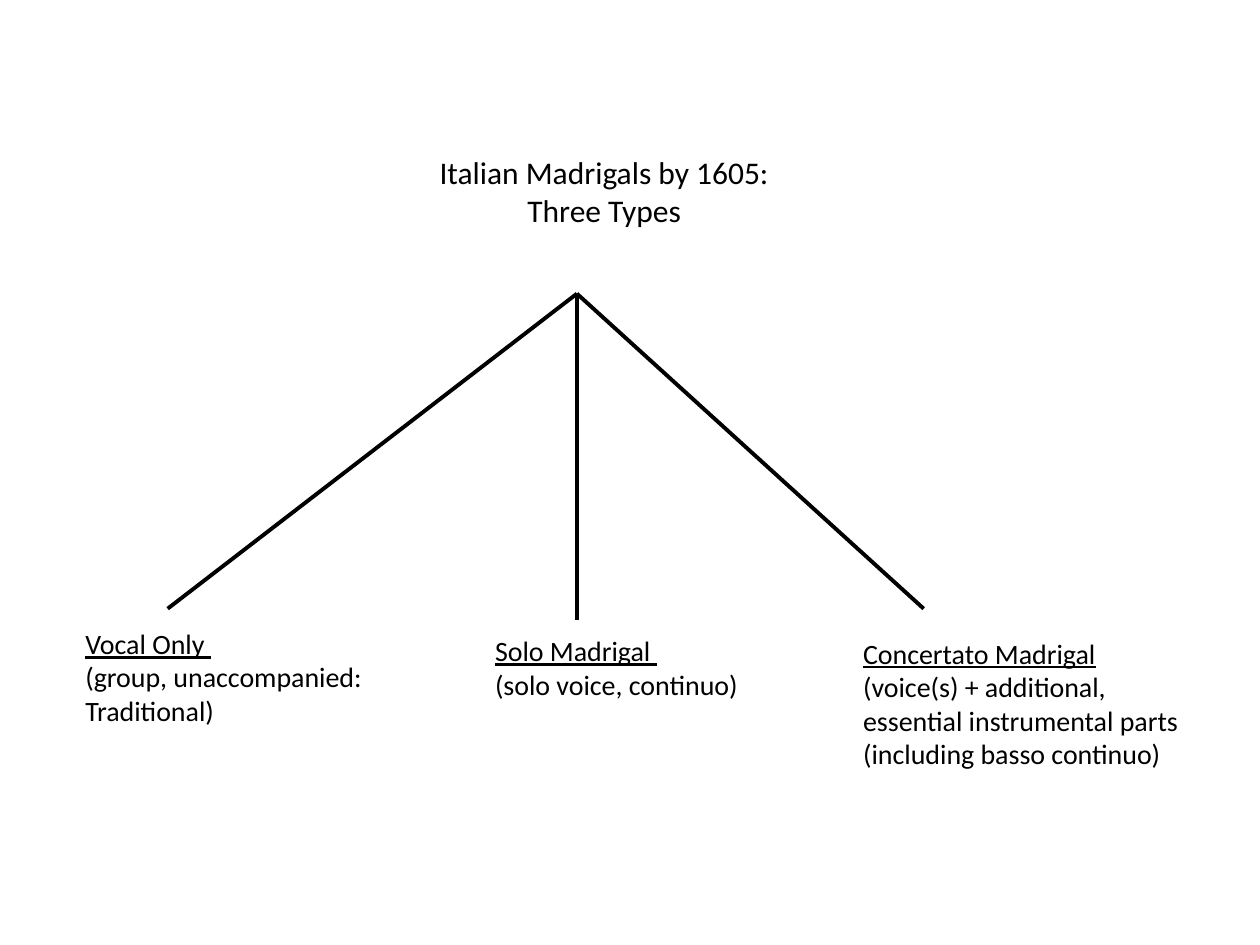
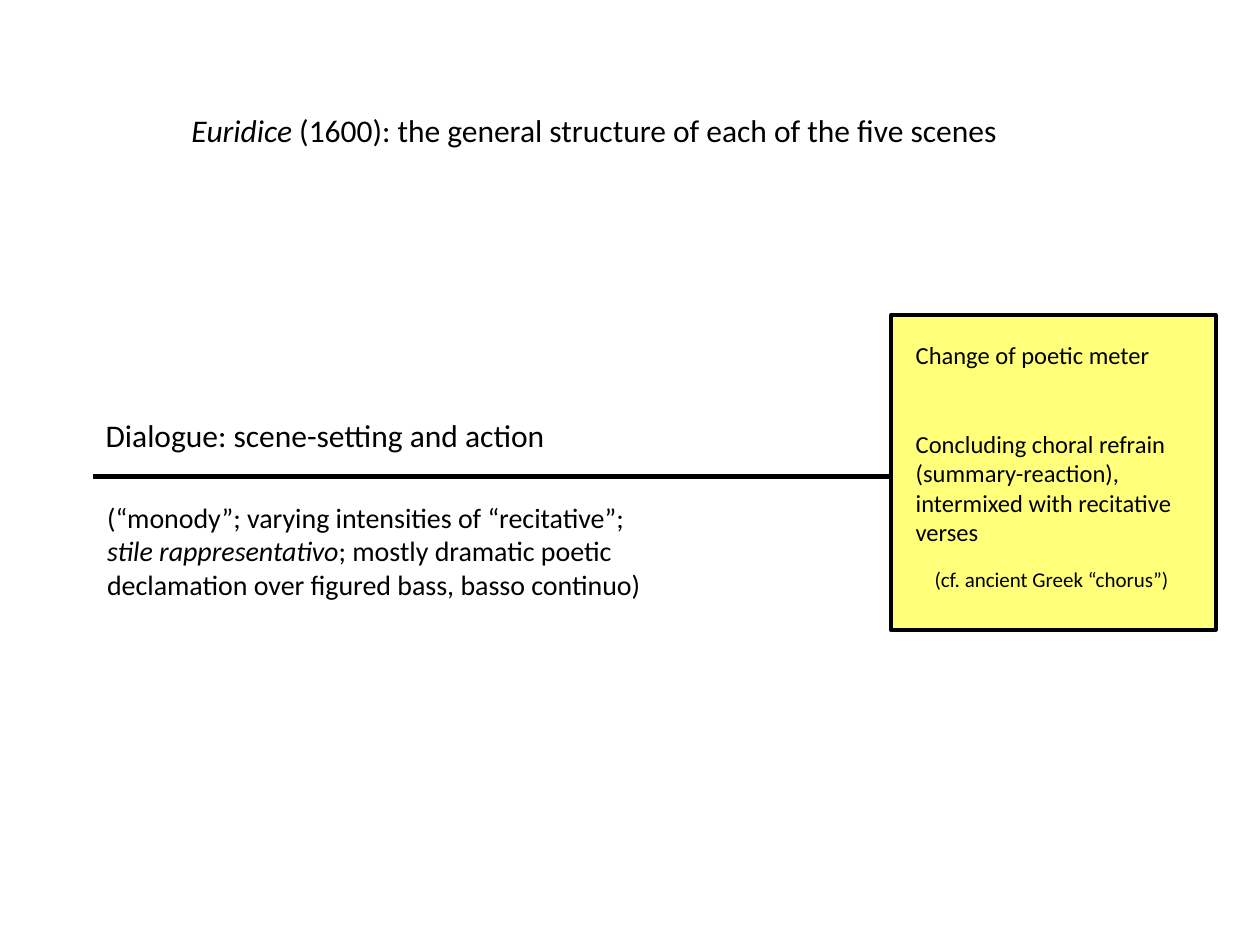
from dataclasses import dataclass

from lxml.etree import SubElement
from pptx import Presentation
from pptx.dml.color import RGBColor
from pptx.enum.shapes import MSO_CONNECTOR as CONN, MSO_SHAPE as SHAPE
from pptx.enum.text import MSO_AUTO_SIZE as FIT, PP_ALIGN as ALIGN
from pptx.oxml.ns import qn
from pptx.slide import Slide
from pptx.util import Cm, Pt

BLACK = RGBColor(0x00, 0x00, 0x00)
YELLOW = RGBColor(0xFF, 0xFF, 0x00)
FONT = "Calibri"
TITLE, BODY, NOTE, SMALL = 18, 16, 14, 12


@dataclass(frozen=True)
class Run:
    text: str
    italic: bool = False


@dataclass(frozen=True)
class Para:
    runs: tuple[Run, ...]
    underline: bool = False
    before: float = 0


@dataclass(frozen=True)
class Label:
    left: float
    top: float
    width: float
    height: float
    size: int
    paras: tuple[Para, ...]
    align: ALIGN = ALIGN.LEFT


@dataclass(frozen=True)
class Line:
    start: tuple[float, float]
    end: tuple[float, float]
    weight: float


def plain(text: str, underline: bool = False, before: float = 0) -> Para:
    """Return a paragraph of one upright run."""
    return Para((Run(text),), underline, before)


APEX = (11.63, 5.92)
BRANCH_ENDS = ((3.38, 12.27), (11.63, 12.5), (18.62, 12.27))
BRANCHES = [Line(APEX, end, 2.25) for end in BRANCH_ENDS]
MADRIGAL_LABELS = [
    Label(8.05, 2.97, 8.26, 1.8, TITLE,
          (plain("Italian Madrigals by 1605:"), plain("Three Types")), ALIGN.CENTER),
    Label(1.47, 12.5, 6.55, 2.31, BODY,
          (plain("Vocal Only ", underline=True),
           plain("(group, unaccompanied:"), plain("Traditional)"))),
    Label(9.73, 12.65, 5.92, 1.63, BODY,
          (plain("Solo Madrigal ", underline=True), plain("(solo voice, continuo)"))),
    Label(17.15, 12.7, 7.19, 3, BODY,
          (plain("Concertato Madrigal", underline=True),
           plain("(voice(s) + additional, essential instrumental parts "
                 "(including basso continuo)"))),
]

REFRAIN_LEFT, REFRAIN_TOP, REFRAIN_WIDTH, REFRAIN_HEIGHT = 17.96, 6.35, 6.55, 6.35
TIMELINE = Line((1.88, 9.6), (REFRAIN_LEFT, 9.6), 3)
SCENE_LABELS = [
    Label(18.21, 6.73, 6.07, 4.45, NOTE,
          (plain("Change of poetic meter"),
           plain("Concluding choral refrain (summary-reaction), "
                 "intermixed with recitative verses", before=34))),
    Label(18.59, 11.3, 5.28, 0.76, SMALL, (plain("(cf. ancient Greek “chorus”)"),)),
    Label(3.61, 2.11, 17.02, 1.02, TITLE,
          (Para((Run("Euridice", italic=True),
                 Run(" (1600): the general structure of each of the five scenes"))),)),
    Label(1.88, 8.26, 10.24, 1.02, TITLE, (plain("Dialogue: scene-setting and action"),)),
    Label(1.91, 9.96, 12.32, 2.31, BODY,
          (plain("(“monody”; varying intensities of “recitative”;"),
           Para((Run("stile rappresentativo", italic=True),
                 Run("; mostly dramatic poetic declamation over figured bass, "
                     "basso continuo)"))))),
]


def add_label(s: Slide, label: Label) -> None:
    """Draw a wrapping text box."""
    sp = s.shapes.add_textbox(Cm(label.left), Cm(label.top),
                              Cm(label.width), Cm(label.height))
    tf = sp.text_frame
    tf.word_wrap = True
    tf.auto_size = FIT.SHAPE_TO_FIT_TEXT
    for i, para in enumerate(label.paras):
        p = tf.add_paragraph() if i else tf.paragraphs[0]
        p.alignment = label.align
        p.space_before = Pt(para.before)
        p.font.name = FONT
        p.font.size = Pt(label.size)
        p.font.color.rgb = BLACK
        p.font.underline = para.underline
        for run in para.runs:
            r = p.add_run()
            r.text = run.text
            if run.italic:
                r.font.italic = True


def add_line(s: Slide, line: Line) -> None:
    """Draw a straight black line without a shadow."""
    (x1, y1), (x2, y2) = line.start, line.end
    sp = s.shapes.add_connector(CONN.STRAIGHT, Cm(x1), Cm(y1), Cm(x2), Cm(y2))
    sp.line.color.rgb = BLACK
    sp.line.width = Pt(line.weight)
    SubElement(sp._element.spPr, qn("a:effectLst"))


def add_refrain_box(s: Slide) -> None:
    """Draw the translucent yellow box that ends the timeline."""
    sp = s.shapes.add_shape(SHAPE.RECTANGLE, Cm(REFRAIN_LEFT), Cm(REFRAIN_TOP),
                            Cm(REFRAIN_WIDTH), Cm(REFRAIN_HEIGHT))
    sp.shadow.inherit = False
    sp.fill.solid()
    sp.fill.fore_color.rgb = YELLOW
    color = sp._element.spPr.find(qn("a:solidFill")).find(qn("a:srgbClr"))
    SubElement(color, qn("a:alpha"), val="52000")
    sp.line.color.rgb = BLACK
    sp.line.width = Pt(2)


def build_madrigals(s: Slide) -> None:
    """Build the tree of madrigal types."""
    for label in MADRIGAL_LABELS:
        add_label(s, label)
    for branch in BRANCHES:
        add_line(s, branch)


def build_scene(s: Slide) -> None:
    """Build the timeline of a scene."""
    add_line(s, TIMELINE)
    add_refrain_box(s)
    for label in SCENE_LABELS:
        add_label(s, label)


def main() -> None:
    """Build and save the presentation."""
    prs = Presentation()
    prs.slide_width, prs.slide_height = Cm(25.4), Cm(19.05)
    for build in (build_madrigals, build_scene):
        build(prs.slides.add_slide(prs.slide_layouts[6]))
    prs.save("out.pptx")


if __name__ == "__main__":
    main()
